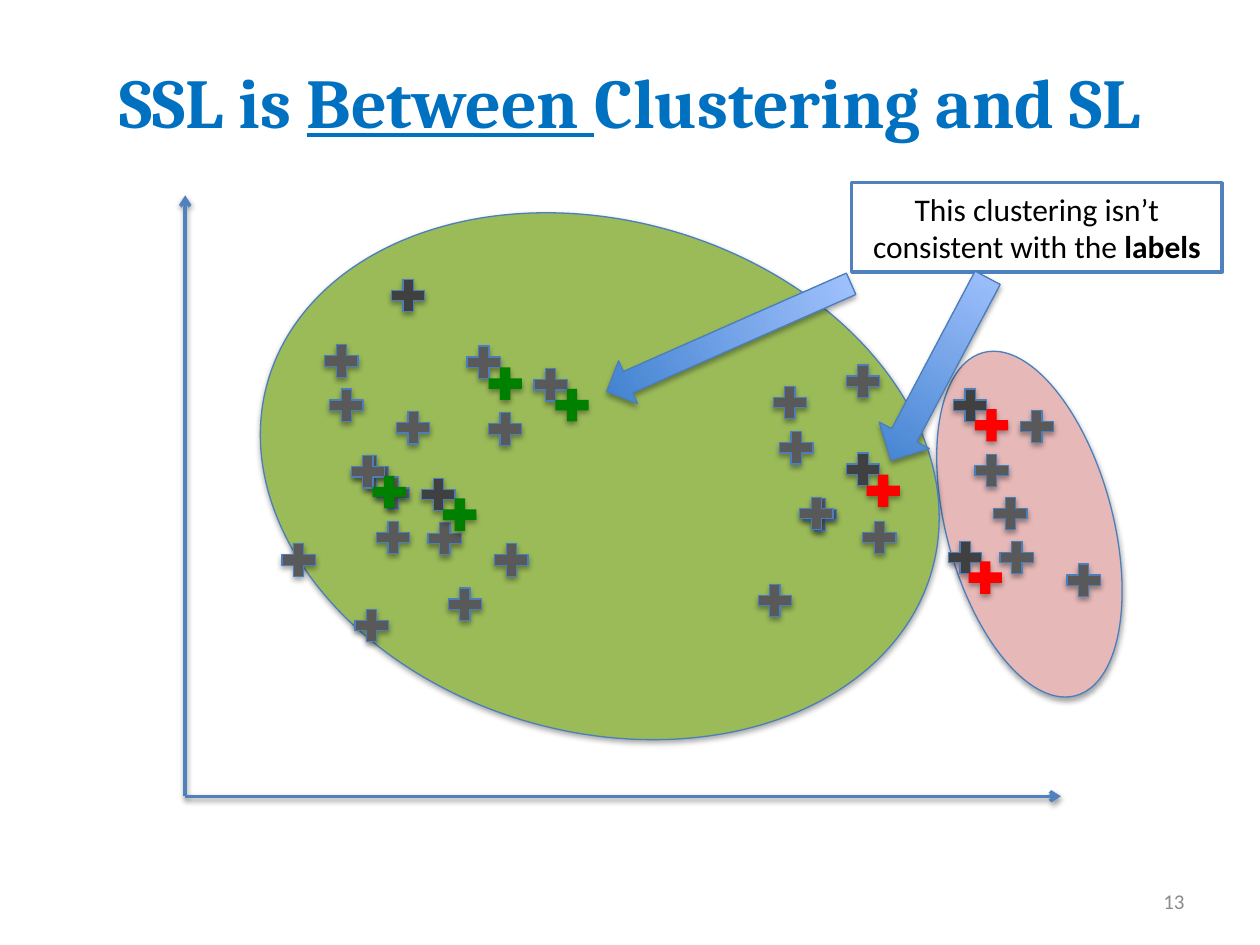
from pptx import Presentation
from pptx.dml.color import RGBColor
from pptx.enum.shapes import MSO_CONNECTOR, MSO_SHAPE
from pptx.enum.text import MSO_ANCHOR, PP_ALIGN
from pptx.oxml import parse_xml
from pptx.oxml.ns import nsdecls
from pptx.util import Inches, Pt

COLS, ROWS = 100, 75
WIDE, HIGH = Inches(10), Inches(7.5)
HUES = {
    "rose": "E6B9B8", "lime": "9BBB59", "edge": "4B7EBC", "axis": "4F81BD",
    "title": "0070C0", "slate": "595959", "coal": "404040", "green": "008000",
    "red": "FF0000", "white": "FFFFFF", "black": "000000", "grey": "8C8C8C",
    "deep": "3F80CE", "pale": "A4C4FF",
}
MARKS = {
    "slate": [
        (33.5, 41), (38.8, 42.7), (35.1, 46.2), (27.7, 47.9), (27.7, 35.7),
        (29.4, 40.9), (21.9, 42.7), (36.6, 27), (41.9, 28.8), (38.3, 32.3),
        (25.7, 30.4), (31, 32.2), (27.4, 35.7), (25.3, 26.9), (78.9, 42.5),
        (84.2, 44.3), (68, 40.9), (63.3, 39.1), (78.4, 39), (59.7, 45.9),
        (80.5, 32.1), (76.9, 35.6), (61.4, 33.8), (63, 39), (60.9, 30.2),
        (66.7, 28.5), (29.4, 37.4),
    ],
    "coal": [(33, 37.5), (30.6, 21.7), (74.8, 42.5), (75.2, 30.4), (66.7, 35.5)],
    "green": [(34.7, 39.1), (38.3, 28.7), (43.6, 30.4), (29.1, 37.3)],
    "red": [(76.4, 44.1), (76.9, 32), (68.3, 37.2)],
}


def col(n):
    return round(WIDE * n / COLS)


def row(n):
    return round(HIGH * n / ROWS)


def place(x, y, w, h):
    return col(x), row(y), col(w), row(h)


def hue(name):
    return RGBColor.from_string(HUES[name])


def shade(item, alpha=35, dist=1.8):
    item.element.spPr.append(parse_xml(
        f'<a:effectLst {nsdecls("a")}><a:outerShdw blurRad="{Pt(3.1)}" '
        f'dist="{Pt(dist)}" dir="5400000" rotWithShape="0">'
        f'<a:srgbClr val="{HUES["black"]}"><a:alpha val="{alpha * 1000}"/>'
        '</a:srgbClr></a:outerShdw></a:effectLst>'))


def form(slide, kind, spot, fill, edge="edge", turn=0):
    item = slide.shapes.add_shape(kind, *place(*spot))
    item.rotation = turn
    if isinstance(fill, tuple):
        item.fill.gradient()
        item.fill.gradient_angle = 90
        for stop, name in zip(item.fill.gradient_stops, fill):
            stop.color.rgb = hue(name)
    else:
        item.fill.solid()
        item.fill.fore_color.rgb = hue(fill)
    if edge:
        item.line.color.rgb = hue(edge)
        item.line.width = Pt(0.75)
    else:
        item.line.fill.background()
    shade(item)
    return item


def axis(slide, x, y):
    line = slide.shapes.add_connector(
        MSO_CONNECTOR.STRAIGHT, col(14.7), row(63.2), col(x), row(y))
    line.line.color.rgb = hue("axis")
    line.line.width = Pt(2)
    line.line._get_or_add_ln().append(
        parse_xml(f'<a:tailEnd {nsdecls("a")} type="arrow"/>'))
    shade(line, 38, 1.6)


def write(frame, runs, face, size, tint, align=PP_ALIGN.CENTER):
    frame.word_wrap = True
    frame.vertical_anchor = MSO_ANCHOR.MIDDLE
    para = frame.paragraphs[0]
    para.alignment = align
    for text, bold, under in runs:
        run = para.add_run()
        run.text = text
        font = run.font
        font.name, font.size = face, Pt(size)
        font.bold, font.underline = bold, under
        font.color.rgb = hue(tint)


def label(slide, spot, *style):
    write(slide.shapes.add_textbox(*place(*spot)).text_frame, *style)


def note(slide, spot, runs):
    box = slide.shapes.add_shape(MSO_SHAPE.RECTANGLE, *place(*spot))
    box.shadow.inherit = False
    box.fill.solid()
    box.fill.fore_color.rgb = hue("white")
    box.line.color.rgb = hue("axis")
    box.line.width = Pt(2)
    write(box.text_frame, runs, "Calibri", 18, "black")


def main():
    deck = Presentation()
    deck.slide_width, deck.slide_height = WIDE, HIGH
    slide = deck.slides.add_slide(deck.slide_layouts[6])

    form(slide, MSO_SHAPE.OVAL, (75.1, 27.5, 13.2, 28.2), "rose", turn=344.9)
    form(slide, MSO_SHAPE.OVAL, (20.2, 17.5, 54.8, 40.6), "lime", turn=15.8)
    label(slide, (5, 3, 90, 9.9),
          [("SSL is ", True, False), ("Between ", True, True),
           ("Clustering and SL", True, False)], "Cambria", 40, "title")
    axis(slide, 14.7, 15.5)
    axis(slide, 84.2, 63.2)

    for tint, spots in MARKS.items():
        edge = "edge" if tint in ("slate", "coal") else None
        for x, y in spots:
            form(slide, MSO_SHAPE.MATH_PLUS, (x, y, 3.6, 3.5), tint, edge)

    label(slide, (71.7, 69.5, 23.3, 4), [("13", False, False)],
          "Calibri", 12, "grey", PP_ALIGN.RIGHT)
    note(slide, (67.6, 14.5, 29.4, 7.1),
         [("This clustering isn’t consistent with the ", False, False),
          ("labels", True, False)])
    for spot, turn in (((72.3, 21.1, 4.5, 16.4), 27.9),
                       ((56, 16.2, 3.7, 21.2), 66.2)):
        form(slide, MSO_SHAPE.DOWN_ARROW, spot, ("deep", "pale"), turn=turn)

    deck.save("out.pptx")


if __name__ == "__main__":
    main()
